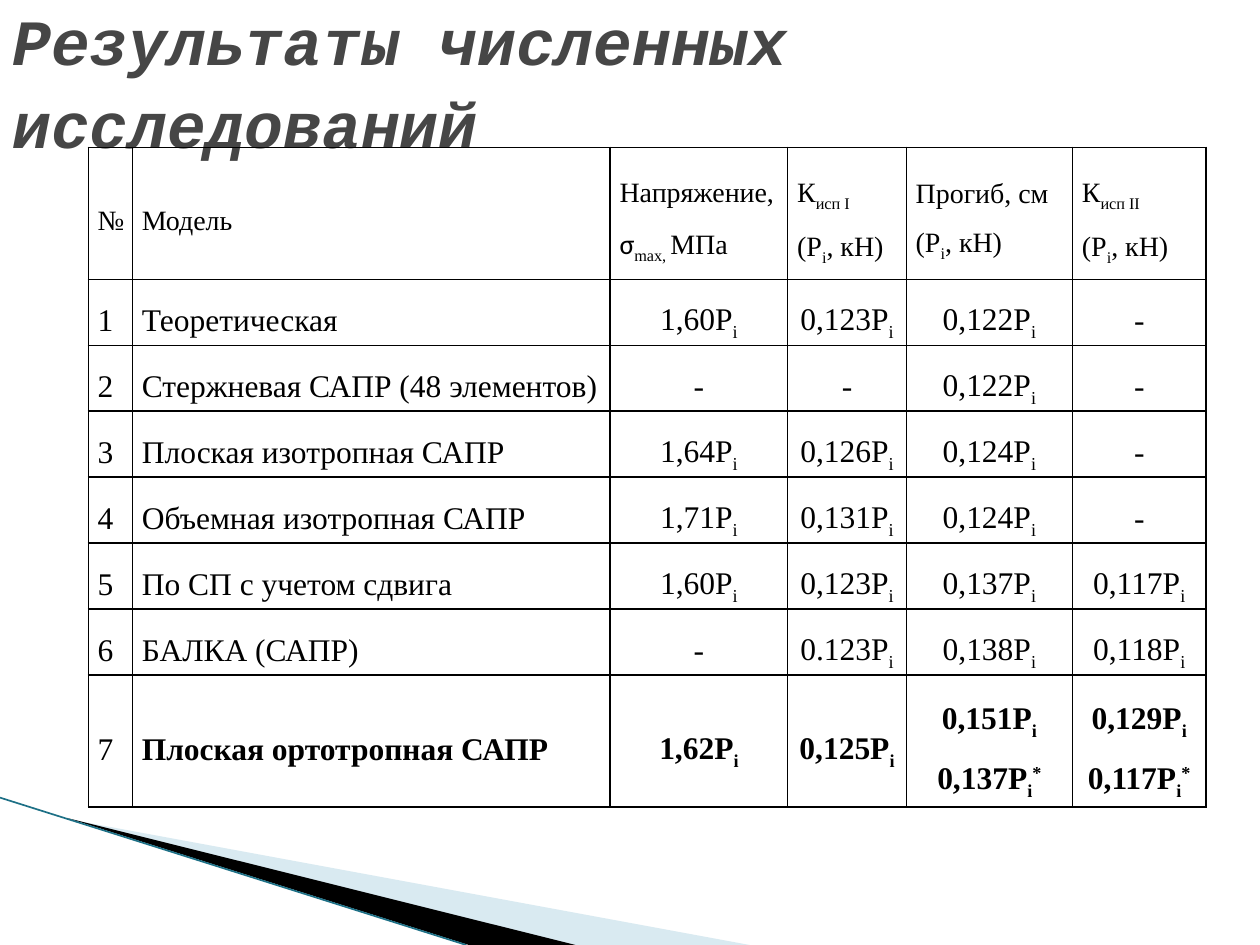
from lxml import etree
from pptx import Presentation, util as u
from pptx.dml.color import RGBColor
from pptx.enum import shapes, text
from pptx.oxml.ns import qn

COLOURS = {"ink": "000000", "title": "464646", "pale": "A0CBDC", "edge": "1D7086"}
BASELINES = {"_": "-25000", "^": "30000"}

HEADER = ["№", "Модель", "Напряжение, {~σ}{_max, }МПа", "К{_исп I}\n(P{_i}, кН)",
          "Прогиб, см\n(P{_i}, кН)", "К{_исп II}\n(P{_i}, кН)"]
# P stands for the load with its subscript
MODELS = [
    ["Теоретическая", "1,60P", "0,123P", "0,122P", "-"],
    ["Стержневая САПР (48 элементов)", "-", "-", "0,122P", "-"],
    ["Плоская изотропная САПР", "1,64P", "0,126P", "0,124P", "-"],
    ["Объемная изотропная САПР", "1,71P", "0,131P", "0,124P", "-"],
    ["По СП с учетом сдвига", "1,60P", "0,123P", "0,137P", "0,117P"],
    ["БАЛКА (САПР)", "-", "0.123P", "0,138P", "0,118P"],
    ["Плоская ортотропная САПР", "1,62P", "0,125P", "0,151P\n0,137P{^*}", "0,129P\n0,117P{^*}"],
]
COLUMNS = [0.89, 9.63, 3.58, 2.39, 3.35, 2.69]
ROWS = [2.66] + [1.33] * 6 + [2.66]


def colour(name):
    return RGBColor.from_string(COLOURS[name])


def write(frame, content, font="Times New Roman", size=18, ink="ink", bold=False,
          italic=False, align=text.PP_ALIGN.LEFT, spacing=1.5):
    """Fill a frame; {_x} is a subscript, {^x} a superscript, {~x} is set in Calibri."""
    for number, line in enumerate(content.split("\n")):
        para = frame.add_paragraph() if number else frame.paragraphs[0]
        para.alignment, para.line_spacing = align, spacing
        for index, piece in enumerate(line.replace("}", "{").split("{")):
            if not piece:
                continue
            mark, piece = (piece[0], piece[1:]) if index % 2 else ("", piece)
            span = para.add_run()
            span.text = piece
            span.font.name = "Calibri" if mark == "~" else font
            span.font.size = u.Pt(size)
            span.font.bold, span.font.italic = bold, italic
            span.font.color.rgb = colour(ink)
            if mark in BASELINES:
                span.font._element.set("baseline", BASELINES[mark])


class SlideBuilder:
    def __init__(self, slide):
        self.slide = slide

    def wedge(self, points, fill, opacity=100):
        corners = [(u.Cm(x), u.Cm(y)) for x, y in points]
        builder = self.slide.shapes.build_freeform(*corners[0])
        builder.add_line_segments(corners[1:], close=True)
        shape = builder.convert_to_shape()
        shape.shadow.inherit = False
        shape.fill.solid()
        shape.fill.fore_color.rgb = colour(fill)
        shape.line.fill.background()
        if opacity < 100:
            tint = shape._element.spPr.find(qn("a:solidFill"))[0]
            etree.SubElement(tint, qn("a:alpha"), val=str(opacity * 1000))

    def line(self, start, end, ink, width):
        line = self.slide.shapes.add_connector(
            shapes.MSO_CONNECTOR.STRAIGHT, *[u.Cm(value) for value in start + end])
        line.line.color.rgb = colour(ink)
        line.line.width = u.Pt(width)
        etree.SubElement(line._element.spPr, qn("a:effectLst"))

    def title(self, content, left, top, width, height):
        box = self.slide.shapes.add_textbox(*[u.Cm(v) for v in (left, top, width, height)])
        frame = box.text_frame
        frame.word_wrap = True
        frame.vertical_anchor = text.MSO_ANCHOR.MIDDLE
        write(frame, content, font="Courier New", size=36.9, ink="title",
              bold=True, italic=True, spacing=1.07)

    def border(self, cell):
        properties = cell._tc.get_or_add_tcPr()
        for position, side in enumerate(("a:lnL", "a:lnR", "a:lnT", "a:lnB")):
            edge = etree.Element(qn(side), w=str(u.Pt(1)))
            fill = etree.SubElement(edge, qn("a:solidFill"))
            etree.SubElement(fill, qn("a:srgbClr"), val=COLOURS["ink"])
            properties.insert(position, edge)

    def table(self, rows, left, top):
        table = self.slide.shapes.add_table(
            len(ROWS), len(COLUMNS), u.Cm(left), u.Cm(top),
            u.Cm(sum(COLUMNS)), u.Cm(sum(ROWS))).table
        table.first_row = table.horz_banding = False
        for column, width in zip(table.columns, COLUMNS):
            column.width = u.Cm(width)
        for row, height in zip(table.rows, ROWS):
            row.height = u.Cm(height)
        last = len(rows) - 1
        for y, row in enumerate(rows):
            for x, content in enumerate(row):
                cell = table.cell(y, x)
                cell.fill.background()
                cell.vertical_anchor = text.MSO_ANCHOR.MIDDLE
                cell.margin_left = cell.margin_right = u.Cm(0.19)
                cell.margin_top = cell.margin_bottom = 0
                centred = y > 0 and x > 1
                write(cell.text_frame, content.replace("P", "P{_i}") if centred else content,
                      size=18 if y else 16, bold=y == last and x > 0,
                      align=text.PP_ALIGN.CENTER if centred else text.PP_ALIGN.LEFT)
                self.border(cell)


def main():
    deck = Presentation()
    deck.slide_width, deck.slide_height = u.Cm(25.4), u.Cm(19.05)
    page = SlideBuilder(deck.slides.add_slide(deck.slide_layouts[6]))

    # Corner decoration
    page.wedge([(1.4, 16.52), (15.11, 19.05), (11.58, 19.05)], "pale", opacity=40)
    page.wedge([(1.35, 16.49), (11.6, 19.05), (9.45, 19.05)], "ink")
    page.line((0, 16.08), (9.4, 19.05), "edge", 0.95)

    # Title and results
    page.title("Результаты численных исследований", 0, 0.5, 25.4, 2.18)
    numbered = [[str(number)] + row for number, row in enumerate(MODELS, 1)]
    page.table([HEADER] + numbered, 1.78, 2.97)

    deck.save("out.pptx")


if __name__ == "__main__":
    main()
